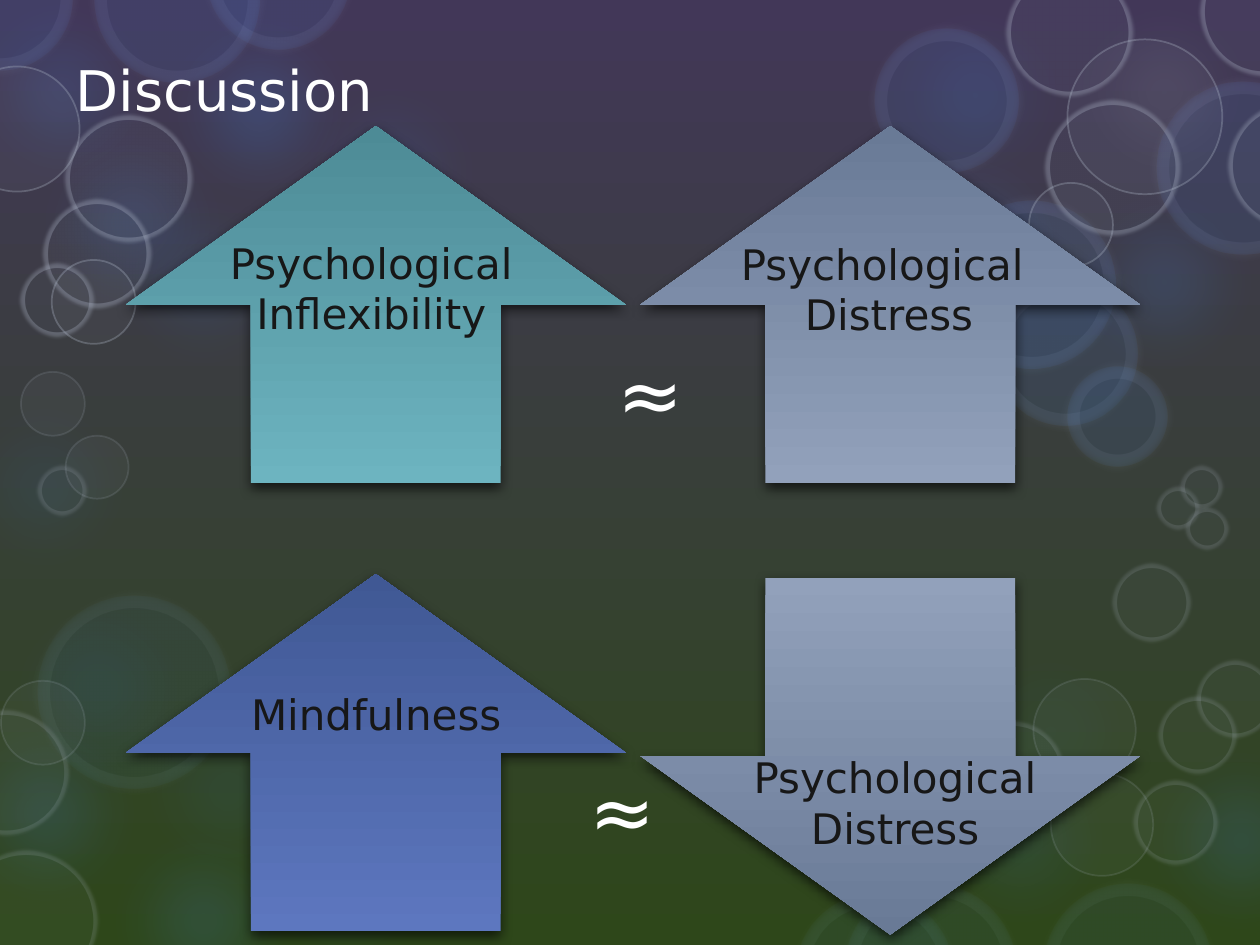
"""Build the Discussion slide: four labelled arrows over a bokeh gradient."""
from lxml.etree import SubElement
from pptx import Presentation
from pptx.dml.color import RGBColor
from pptx.enum.shapes import MSO_SHAPE
from pptx.enum.text import MSO_ANCHOR, MSO_AUTO_SIZE, PP_ALIGN
from pptx.oxml.ns import qn
from pptx.util import Pt

WHITE = RGBColor(0xFF, 0xFF, 0xFF)
INK = RGBColor(0x17, 0x17, 0x17)
BLUE = RGBColor(0x4A, 0x8E, 0xF2)
PALE = RGBColor(0xCD, 0xE0, 0xFB)
GREY = RGBColor(0xB2, 0xBC, 0xCB)
SKY = RGBColor(0x42, 0x37, 0x58), RGBColor(0x2E, 0x47, 0x1A)
TEAL = RGBColor(0x6D, 0xB4, 0xC0), RGBColor(0x4D, 0x8B, 0x96)
SLATE = RGBColor(0x92, 0xA1, 0xBB), RGBColor(0x69, 0x7A, 0x96)
INDIGO = RGBColor(0x5D, 0x77, 0xBF), RGBColor(0x40, 0x58, 0x94)
FONT = "DejaVu Sans"
GLOW = 150.5


def add_xml(parent, tag, **attrs):
    return SubElement(parent, qn(tag), {k: str(v) for k, v in attrs.items()})


def set_text(sp, text, size=24, color=INK, align=PP_ALIGN.CENTER, wrap=True,
             anchor=MSO_ANCHOR.TOP, fit=MSO_AUTO_SIZE.SHAPE_TO_FIT_TEXT):
    tf = sp.text_frame
    tf.text = text
    tf.word_wrap = wrap
    tf.auto_size = fit
    tf.vertical_anchor = anchor
    for p in tf.paragraphs:
        p.alignment = align
        for r in p.runs:
            r.font.name = FONT
            r.font.size = Pt(size)
            r.font.color.rgb = color


prs = Presentation()
prs.slide_width, prs.slide_height = Pt(720), Pt(540)
slide = prs.slides.add_slide(prs.slide_layouts[5])
shapes = slide.shapes
title = shapes.title

fill = slide.background.fill
fill.gradient()
fill.gradient_angle = 270
for stop, color in zip(fill.gradient_stops, SKY):
    stop.color.rgb = color

bokeh = [
    (BLUE, 8, None, 0, 0, 35, [(-19, 318, GLOW), (55, 377, GLOW), (125, 429, GLOW),
                               (-50, 203, GLOW)]),
    (BLUE, 10, None, 0, 0, 35, [(41, 86, GLOW), (148, 22, GLOW), (482, -21, GLOW),
                                (508, 405, GLOW), (486, 189, 96)]),
    (BLUE, 15, None, 0, 0, 35, [(-40, -23, GLOW), (0, 52, GLOW), (590, 86, GLOW),
                                (482, 62, GLOW)]),
    (BLUE, 16, None, 0, 0, 35, [(41, 451, GLOW), (634, 405, GLOW), (-49, 389.5, GLOW)]),
    (BLUE, 20, None, 0, 0, 35, [(73, -13, GLOW)]),
    (BLUE, 5, None, 0, 0, 35, [(525, 343, GLOW)]),
    (GREY, 10, None, 0, 0, 35, [(590, -23, GLOW)]),
    (BLUE, 10, PALE, 14, 6, 5, [(661, 47, 98.5), (500, 16.5, 82), (541.5, 114.5, 96),
                                (568, 161, 82), (610, 209.5, 57), (54, -47, 94),
                                (118, -54, 82), (-41, -42, 82)]),
    (BLUE, 6, PALE, 14, 4, 5, [(21.5, 340.5, 110), (455, 511, 90), (482.5, 505, 98),
                               (596.5, 505, 96)]),
    (GREY, 5, GREY, 1, 30, 0, [(-26, 38, 71.5), (29.5, 148.5, 48), (610, 22.5, 88.5),
                               (588, 104.5, 48)]),
    (GREY, 5, GREY, 1, 15, 0, [(0.5, 389, 48), (600.5, 442, 58.5), (590.5, 388, 58.5),
                               (12, 212.5, 36.5), (37.5, 249, 36)]),
    (GREY, 5, GREY, 5, 30, 2, [(37.5, 66, 72), (25, 114.5, 61), (12, 151, 41),
                               (575.5, -17, 71.5), (686, -29, 72), (702, 59, 71.5),
                               (597.5, 57.5, 76.5)]),
    (GREY, 5, GREY, 5, 15, 2, [(-25, 486, 80.5), (-31.5, 406, 70.5), (549.5, 412.5, 58.5),
                               (648, 446.5, 47.5), (636, 322.5, 44), (662.5, 398, 44),
                               (684, 377.5, 44), (674.5, 266.5, 24), (661, 278.5, 24),
                               (677.5, 290, 24), (21.5, 266.5, 28)]),
]
for color, alpha, line, width, line_alpha, soft, circles in bokeh:
    for x, y, d in circles:
        sp = shapes.add_shape(MSO_SHAPE.OVAL, Pt(x), Pt(y), Pt(d), Pt(d))
        sp.shadow.inherit = False
        sp.fill.solid()
        sp.fill.fore_color.rgb = color
        spPr = sp._element.spPr
        add_xml(spPr.find(qn("a:solidFill"))[0], "a:alpha", val=alpha * 1000)
        if line:
            sp.line.color.rgb = line
            sp.line.width = Pt(width)
            add_xml(spPr.find(qn("a:ln")).find(qn("a:solidFill"))[0], "a:alpha",
                    val=line_alpha * 1000)
        else:
            sp.line.fill.background()
        if soft:
            add_xml(spPr.find(qn("a:effectLst")), "a:softEdge", rad=Pt(soft))

shapes._spTree.append(title._element)
title.left, title.top, title.width, title.height = Pt(36), Pt(6), Pt(648), Pt(90)
set_text(title, "Discussion", size=32, color=WHITE, align=PP_ALIGN.LEFT,
         anchor=MSO_ANCHOR.MIDDLE, fit=MSO_AUTO_SIZE.NONE)

for x, y in [(345.5, 193.5), (330, 432)]:
    sp = shapes.add_textbox(Pt(x), Pt(y), Pt(48), Pt(62))
    set_text(sp, "≈", size=45, color=WHITE, align=PP_ALIGN.LEFT)

arrows = [
    (72, 72, 180, TEAL, "Psychological \nInflexibility ", (124, 132, 184, 65.5)),
    (366, 72, 180, SLATE, "Psychological \nDistress", (416, 132.5, 184, 65.5)),
    (72, 328, 180, INDIGO, "Mindfulness", (136, 390, 158, 36)),
    (366, 330, 0, SLATE, "Psychological\nDistress", (419.5, 426, 184, 65.5)),
]
for x, y, turn, colors, label, box in arrows:
    group = shapes.add_group_shape()
    sp = group.shapes.add_shape(MSO_SHAPE.DOWN_ARROW, Pt(x), Pt(y), Pt(285.5), Pt(204))
    sp.rotation = turn
    sp.line.fill.background()
    sp.fill.gradient()
    sp.fill.gradient_angle = 270
    for stop, color in zip(sp.fill.gradient_stops, colors):
        stop.color.rgb = color
    sp.shadow.inherit = False
    shadow = add_xml(sp._element.spPr.find(qn("a:effectLst")), "a:outerShdw", blurRad=Pt(7),
                     dist=Pt(3), dir=5400000, algn="ctr", rotWithShape=0)
    add_xml(add_xml(shadow, "a:srgbClr", val="000000"), "a:alpha", val=65000)
    sp = group.shapes.add_textbox(*map(Pt, box))
    set_text(sp, label, wrap=False)

prs.save("out.pptx")
